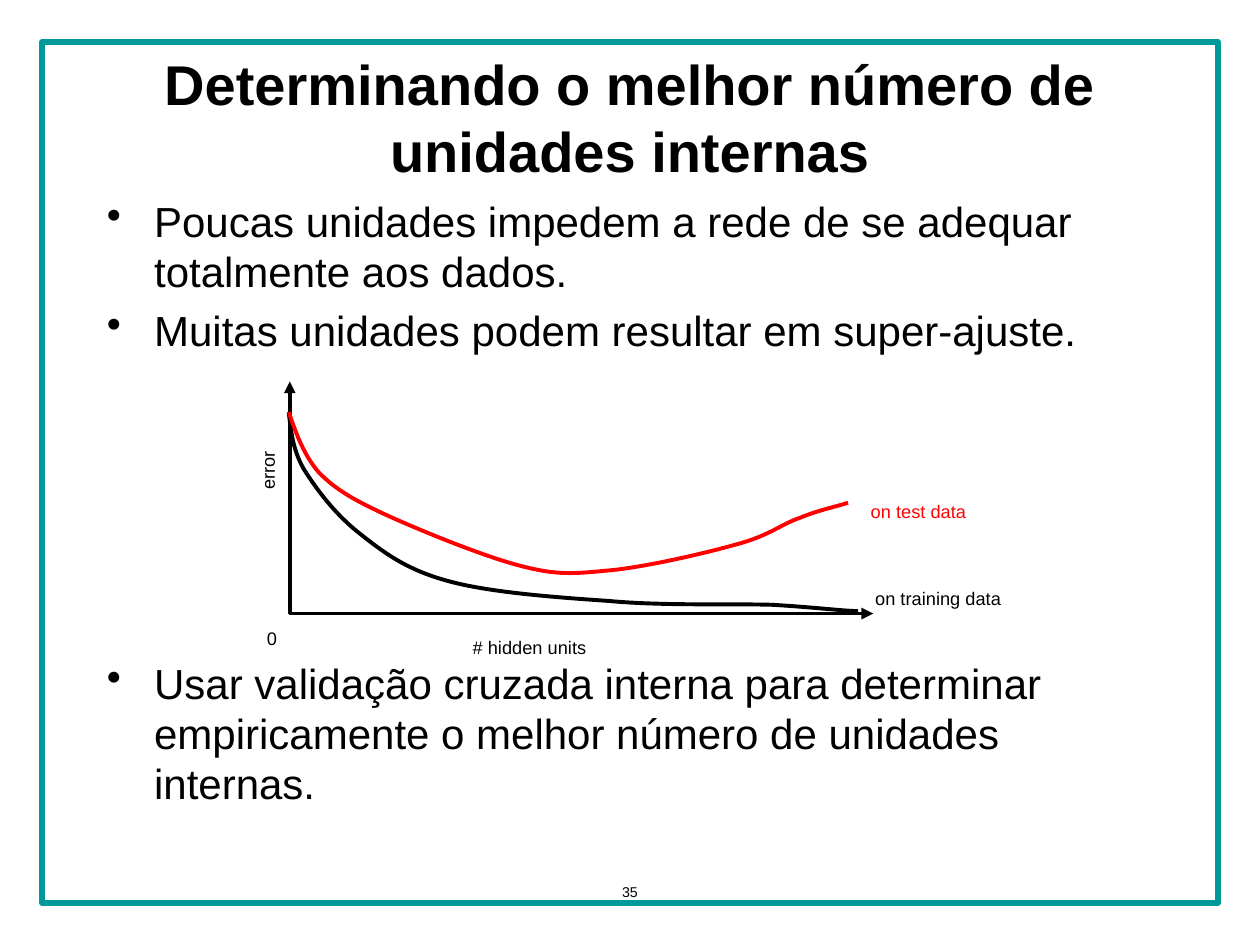
from dataclasses import dataclass

from lxml.etree import SubElement
from pptx import Presentation
from pptx.dml.color import RGBColor as RGB
from pptx.enum.shapes import MSO_CONNECTOR as CONNECTOR, MSO_SHAPE as SHAPE
from pptx.enum.text import MSO_ANCHOR as ANCHOR, MSO_AUTO_SIZE as FIT, PP_ALIGN as ALIGN
from pptx.oxml.ns import qn
from pptx.util import Pt


@dataclass(frozen=True)
class Theme:
    font: str = "Arial"
    ink: RGB = RGB(0x00, 0x00, 0x00)
    test: RGB = RGB(0xFF, 0x00, 0x00)
    border: RGB = RGB(0x00, 0x99, 0x99)
    title: int = 32
    body: int = 24
    label: int = 18
    page: int = 14
    stroke: float = 2.25
    leading: float = 1.2


THEME = Theme()


def write(paragraph, text, size, color=THEME.ink, bold=False, align=ALIGN.LEFT,
          leading=None, after=0, bullet=None, baseline=None):
    paragraph.alignment = align
    paragraph.space_after = Pt(after)
    if leading:
        paragraph.line_spacing = Pt(size * leading)
    if bullet:
        props = paragraph._p.get_or_add_pPr()
        props.set("marL", str(Pt(27)))
        props.set("indent", str(-Pt(27)))
        SubElement(props, qn("a:buChar"), char=bullet)
    run = paragraph.add_run()
    run.text = text
    run.font.name, run.font.size, run.font.bold = THEME.font, Pt(size), bold
    run.font.color.rgb = color
    if baseline:
        run._r.get_or_add_rPr().set("baseline", str(baseline * 1000))


class SlideBuilder:
    def __init__(self, slide, theme):
        self.shapes, self.theme = slide.shapes, theme

    def frame(self, left, top, width, height):
        border = self.shapes.add_shape(SHAPE.RECTANGLE, *map(Pt, (left, top, width, height)))
        border.shadow.inherit = False
        border.fill.background()
        border.line.color.rgb, border.line.width = self.theme.border, Pt(3)

    def text(self, box, lines, size, anchor=ANCHOR.TOP, **style):
        holder = self.shapes.add_textbox(*map(Pt, box))
        frame = holder.text_frame
        frame.word_wrap, frame.vertical_anchor = True, anchor
        for index, line in enumerate(lines):
            paragraph = frame.add_paragraph() if index else frame.paragraphs[0]
            write(paragraph, line, size, **style)
        return holder

    def bullets(self, box, lines):
        self.text(box, lines, self.theme.body, bullet="•",
                  leading=self.theme.leading, after=self.theme.body * 0.2)

    def label(self, text, left, top, width, color=THEME.ink, rotation=0):
        holder = self.text((left, top, width, 31), [text], self.theme.label,
                           color=color, baseline=-25)
        holder.text_frame.word_wrap = False
        holder.text_frame.auto_size = FIT.SHAPE_TO_FIT_TEXT
        holder.rotation = rotation

    def axis(self, start, end):
        arrow = self.shapes.add_connector(CONNECTOR.STRAIGHT, *map(Pt, start + end))
        arrow.line.color.rgb, arrow.line.width = self.theme.ink, Pt(self.theme.stroke)
        SubElement(arrow.line._get_or_add_ln(), qn("a:tailEnd"), type="triangle")
        SubElement(arrow._element.spPr, qn("a:effectLst"))

    def curve(self, points, color):
        start, *rest = [(Pt(x), Pt(y)) for x, y in points]
        builder = self.shapes.build_freeform(*start)
        builder.add_line_segments(rest, close=False)
        curve = builder.convert_to_shape()
        curve.shadow.inherit = False
        curve.fill.background()
        curve.line.color.rgb, curve.line.width = color, Pt(self.theme.stroke)
        outline = next(curve._element.iter(qn("a:path")))
        segments = outline.findall(qn("a:lnTo"))
        for first in range(0, len(segments), 3):
            bezier = SubElement(outline, qn("a:cubicBezTo"))
            for segment in segments[first:first + 3]:
                bezier.append(segment[0])
                outline.remove(segment)


TRAINING_ERROR = [
    (165, 235.5),
    (166.3, 245.5), (167, 256.3), (173.5, 267.8),
    (180.7, 279.4), (191.5, 293.8), (205.2, 304.6),
    (218.9, 315.4), (231.8, 325.4), (255.6, 331.9),
    (278.6, 338.4), (316.8, 341.3), (347.8, 343.4),
    (378.7, 346.3), (417.6, 344.9), (441.4, 345.6),
    (465.1, 347), (483.1, 349.2), (490.3, 349.2),
]
TEST_ERROR = [
    (165, 235.5),
    (169.2, 247.7), (173.5, 259.9), (182.2, 270),
    (191.5, 279.4), (200.9, 285.1), (219.6, 293.8),
    (238.3, 302.4), (273.6, 316.8), (294.5, 322.6),
    (315.4, 328.3), (324.7, 328.3), (345.6, 326.2),
    (366.5, 324.7), (403.2, 316.1), (421.2, 311),
    (439.9, 306), (446.4, 299.5), (457.2, 295.9),
    (467.3, 291.6), (481, 288.7), (484.6, 287.3),
]


def main():
    """Build the slide on choosing the number of hidden units."""
    deck = Presentation()
    deck.slide_width, deck.slide_height = Pt(720), Pt(540)
    page = SlideBuilder(deck.slides.add_slide(deck.slide_layouts[6]), THEME)

    page.frame(24, 24, 672, 492)
    page.text((246, 492, 228, 37), ["35"], THEME.page, align=ALIGN.CENTER, baseline=-25)
    page.text((36, 21.6, 648, 90), ["Determinando o melhor número de unidades internas"],
              THEME.title, anchor=ANCHOR.MIDDLE, bold=True, align=ALIGN.CENTER,
              leading=THEME.leading)
    page.bullets((54, 108, 612, 100), [
        "Poucas unidades impedem a rede de se adequar totalmente aos dados.",
        "Muitas unidades podem resultar em super-ajuste.",
    ])
    page.bullets((54, 372, 612, 100), [
        "Usar validação cruzada interna para determinar empiricamente "
        "o melhor número de unidades internas.",
    ])

    page.axis((165.6, 350.6), (165.6, 218))
    page.axis((165, 350.6), (499, 350.6))
    page.label("error", 120, 245, 53, rotation=270)
    page.label("on training data", 493, 320, 140)
    page.label("on test data", 490.5, 270, 105, color=THEME.test)
    page.label("0", 145.5, 343, 24.5)
    page.label("# hidden units", 263, 348, 127)
    page.curve(TRAINING_ERROR, THEME.ink)
    page.curve(TEST_ERROR, THEME.test)

    deck.save("out.pptx")


if __name__ == "__main__":
    main()
